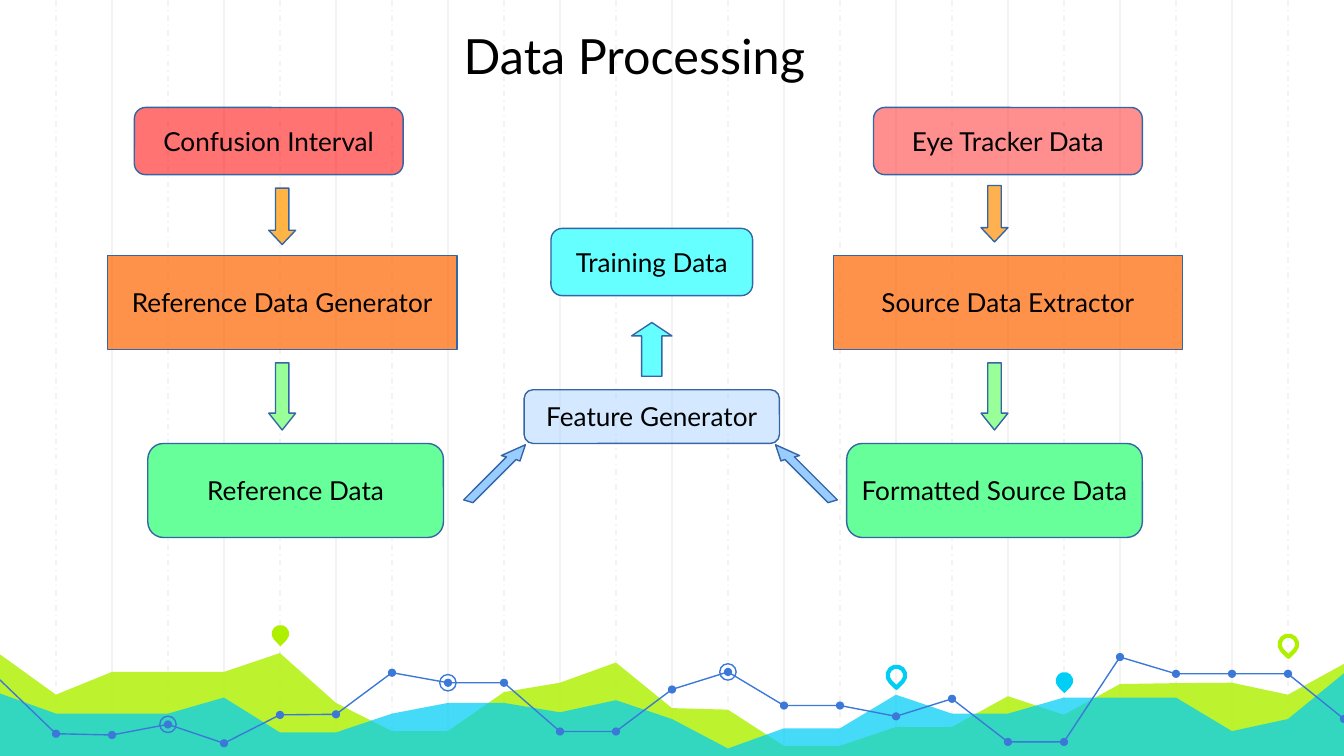
from dataclasses import dataclass

from lxml import etree
from pptx import Presentation
from pptx.dml.color import RGBColor
from pptx.enum import dml, shapes, text
from pptx.oxml.ns import qn
from pptx.util import Pt

WIDTH, HEIGHT, COLUMN = 720, 405, 30
FONT = "Lato"
COLORS = {
    "grid": "F3F3F3", "lime": "AFF000", "cyan": "00CEF6", "trend": "3C78D8",
    "outline": "3465A4", "text": "000000", "red": "FF0000", "coral": "FF3333",
    "orange": "FF6600", "amber": "FF9900", "tangerine": "FF950E", "green": "66FF99",
    "mint": "99FF99", "sky": "99CCFF", "aqua": "66FFFF",
}
# Heights at each grid column, from the left edge to the right edge
LIME_HILLS = [350.6, 372.2, 360, 360, 360, 349.9, 376.6, 391.7, 391.7, 370.8, 365.8, 355,
              379.4, 380.2, 399.6, 399.6, 389.5, 389.5, 373, 383, 366.5, 366, 365.8, 372.2, 355.7]
CYAN_HILLS = [371.5, 382.3, 382.3, 382.3, 373.7, 392.4, 392.4, 382.3, 376.6, 376.6, 381.6, 375.1,
              385.2, 401, 390.2, 390.2, 372.2, 382.3, 382.3, 373.7, 373.7, 373.7, 391.7, 385.2, 360.7]
TREND = [364.3, 393.1, 393.8, 388.1, 398.2, 383, 382.7, 360.4, 365.8, 365.8, 391.9, 391.9,
         369.4, 360, 378, 378, 383.8, 374.4, 397.5, 397.5, 352, 361, 361, 361, 385.2]
RINGED_COLUMNS = (3, 8, 13)

Point = tuple[float, float]
Preset = shapes.MSO_SHAPE


@dataclass
class Pin:
    column: int
    y: float
    color: str
    filled: bool


@dataclass
class Box:
    label: str
    left: float
    top: float
    width: float
    height: float
    color: str
    alpha: int = 100
    preset: Preset = Preset.ROUNDED_RECTANGLE


@dataclass
class BlockArrow:
    left: float
    top: float
    width: float
    height: float
    head: float
    color: str
    alpha: int = 100
    preset: Preset = Preset.DOWN_ARROW


PINS = [
    Pin(5, 339.5, "lime", True), Pin(16, 361.8, "cyan", False),
    Pin(19, 364.7, "cyan", True), Pin(23, 345.2, "lime", False),
]
BOXES = [
    Box("Eye Tracker Data", 468, 57.6, 144, 36, "coral", 55),
    Box("Confusion Interval", 72, 57.6, 144, 36, "red", 55),
    Box("Reference Data Generator", 57.6, 136.8, 187.2, 50.4, "orange", 71, Preset.RECTANGLE),
    Box("Source Data Extractor", 446.4, 136.8, 187.2, 50.4, "orange", 71, Preset.RECTANGLE),
    Box("Reference Data", 79.2, 237.6, 158.4, 50.4, "green"),
    Box("Formatted Source Data", 453.6, 237.6, 158.4, 50.4, "green"),
    Box("Feature Generator", 280.8, 208.8, 136.8, 28.8, "sky", 42),
    Box("Training Data", 295.2, 122.4, 108, 36, "aqua"),
]
BLOCK_ARROWS = [
    BlockArrow(144, 100.8, 14.4, 30.2, 7.6, "amber", 73),
    BlockArrow(525.6, 99.4, 14.4, 30.2, 7.6, "tangerine", 73),
    BlockArrow(144, 194.4, 14.4, 36, 9, "mint"),
    BlockArrow(525.6, 194.4, 14.4, 36, 9, "mint"),
    BlockArrow(338.4, 172.8, 21.6, 28.8, 7.2, "aqua", preset=Preset.UP_ARROW),
]
SLANTED_ARROW = [(248.4, 267.8), (271.4, 244.8), (268.6, 244.1), (281.5, 238.3),
                 (278.6, 247), (276.5, 246.2), (253.4, 269.3)]
MIRROR_AXIS = 348.5


def color(name: str) -> RGBColor:
    return RGBColor.from_string(COLORS[name])


def style(shape, fill: str | None = None, alpha: int = 100,
          line: str | None = None, line_width: float = 0.75) -> None:
    shape.shadow.inherit = False
    if fill:
        shape.fill.solid()
        shape.fill.fore_color.rgb = color(fill)
        if alpha < 100:
            rgb = shape.element.spPr.find(qn("a:solidFill")).find(qn("a:srgbClr"))
            etree.SubElement(rgb, qn("a:alpha")).set("val", str(alpha * 1000))
    else:
        shape.fill.background()
    if line:
        shape.line.color.rgb = color(line)
        shape.line.width = Pt(line_width)
    else:
        shape.line.fill.background()


def add_preset(slide, preset: Preset, left: float, top: float, width: float, height: float):
    return slide.shapes.add_shape(preset, Pt(left), Pt(top), Pt(width), Pt(height))


def add_centered(slide, preset: Preset, x: float, y: float, size: float):
    return add_preset(slide, preset, x - size / 2, y - size / 2, size, size)


def add_outline(slide, points: list[Point], close: bool):
    start, *rest = [(Pt(x), Pt(y)) for x, y in points]
    builder = slide.shapes.build_freeform(*start)
    builder.add_line_segments(rest, close=close)
    return builder.convert_to_shape()


def add_run(paragraph, words: str, size: float) -> None:
    run = paragraph.add_run()
    run.text = words
    run.font.name = FONT
    run.font.size = Pt(size)
    run.font.color.rgb = color("text")


def set_frame(frame) -> None:
    """Centre the text vertically and remove the margins."""
    frame.word_wrap = True
    frame.auto_size = text.MSO_AUTO_SIZE.NONE
    frame.vertical_anchor = text.MSO_ANCHOR.MIDDLE
    frame.margin_left = frame.margin_right = frame.margin_top = frame.margin_bottom = 0


def add_grid(slide) -> None:
    for column in [*range(2, 24, 2), *range(1, 24, 2)]:
        x = Pt(column * COLUMN)
        line = slide.shapes.add_connector(shapes.MSO_CONNECTOR.STRAIGHT, x, 0, x, Pt(HEIGHT))
        line.line.color.rgb = color("grid")
        line.line.width = Pt(0.75)
        if column % 2:
            line.line.dash_style = dml.MSO_LINE.DASH_DOT
        etree.SubElement(line.element.spPr, qn("a:effectLst"))


def along_columns(heights: list[float]) -> list[Point]:
    return [(column * COLUMN, y) for column, y in enumerate(heights)]


def add_landscape(slide) -> None:
    for heights, fill, alpha in ((LIME_HILLS, "lime", 82), (CYAN_HILLS, "cyan", 73)):
        points = along_columns(heights) + [(WIDTH, HEIGHT), (0, HEIGHT)]
        style(add_outline(slide, points, close=True), fill, alpha)
    for pin in PINS:
        shape = add_centered(slide, Preset.TEAR, pin.column * COLUMN + 0.2, pin.y, 9.4)
        shape.rotation = 135
        if pin.filled:
            style(shape, fill=pin.color)
        else:
            style(shape, line=pin.color, line_width=2.25)
    trend = along_columns(TREND)
    style(add_outline(slide, trend, close=False), line="trend")
    for x, y in trend[1:]:
        style(add_centered(slide, Preset.OVAL, x, y, 4.4), fill="trend")
    for column in RINGED_COLUMNS:
        style(add_centered(slide, Preset.OVAL, *trend[column], 8.8), line="trend")


def add_title(slide) -> None:
    title = slide.shapes.title
    title.left, title.top, title.width, title.height = Pt(248.4), Pt(1.4), Pt(198), Pt(56.2)
    set_frame(title.text_frame)
    paragraph = title.text_frame.paragraphs[0]
    paragraph.alignment = text.PP_ALIGN.LEFT
    add_run(paragraph, "Data Processing", 26)
    slide.shapes.element.append(title.element)  # in front of the grid


def add_box(slide, box: Box) -> None:
    shape = add_preset(slide, box.preset, box.left, box.top, box.width, box.height)
    style(shape, box.color, box.alpha, "outline")
    set_frame(shape.text_frame)
    paragraph = shape.text_frame.paragraphs[0]
    paragraph.alignment = text.PP_ALIGN.CENTER
    add_run(paragraph, box.label, 14)


def add_block_arrow(slide, arrow: BlockArrow) -> None:
    shape = add_preset(slide, arrow.preset, arrow.left, arrow.top, arrow.width, arrow.height)
    shape.adjustments[0] = 0.5
    shape.adjustments[1] = arrow.head / arrow.width
    style(shape, arrow.color, arrow.alpha, "outline")


def main() -> None:
    presentation = Presentation()
    presentation.slide_width, presentation.slide_height = Pt(WIDTH), Pt(HEIGHT)
    slide = presentation.slides.add_slide(presentation.slide_layouts[5])
    add_grid(slide)
    add_landscape(slide)
    add_title(slide)
    for arrow in BLOCK_ARROWS:
        add_block_arrow(slide, arrow)
    mirrored = [(2 * MIRROR_AXIS - x, y) for x, y in SLANTED_ARROW]
    for points in (SLANTED_ARROW, mirrored):
        style(add_outline(slide, points, close=True), "sky", line="outline")
    for box in BOXES:
        add_box(slide, box)
    presentation.save("out.pptx")


if __name__ == "__main__":
    main()
